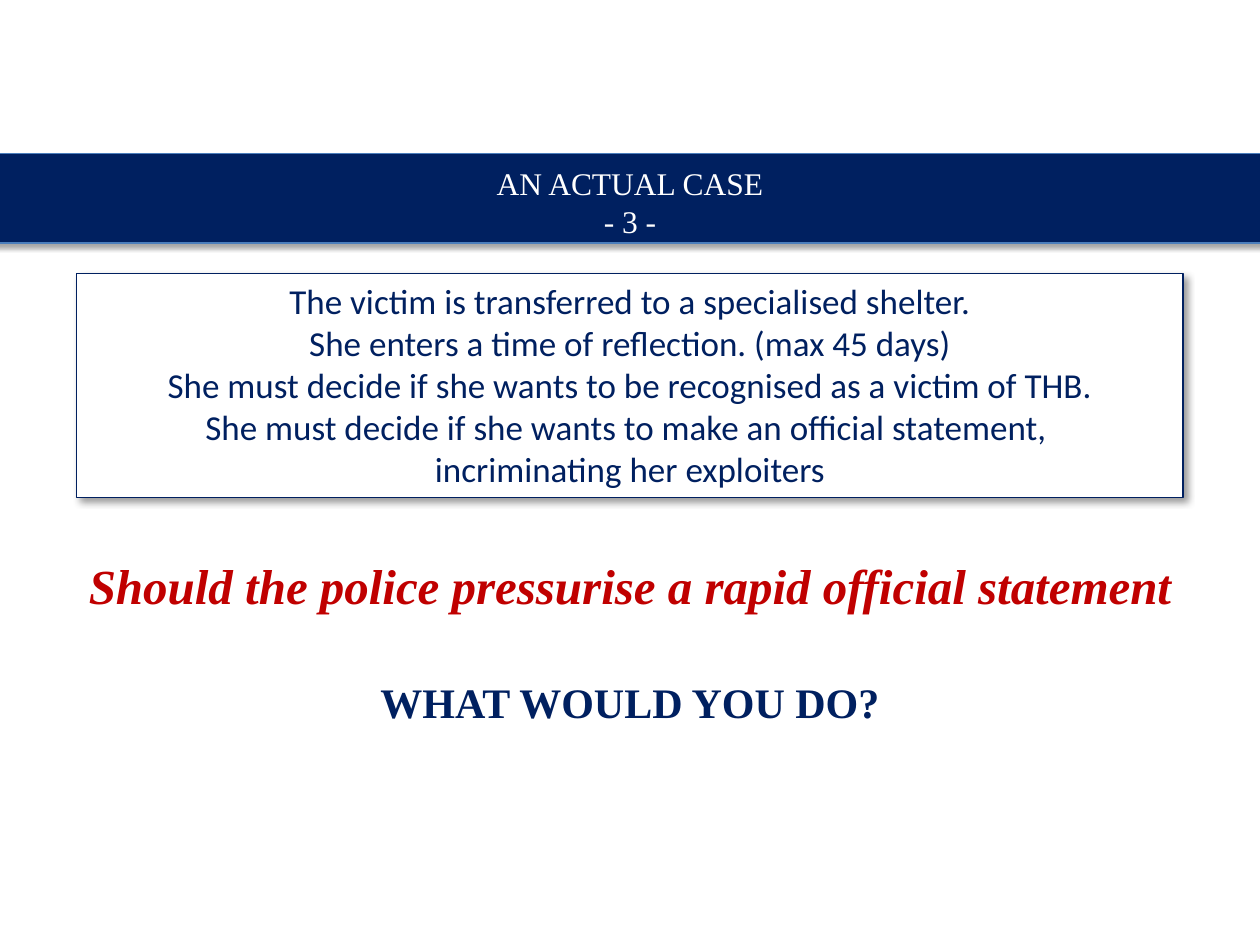
from lxml import etree
from pptx import Presentation
from pptx.dml.color import RGBColor
from pptx.enum.shapes import MSO_SHAPE
from pptx.enum.text import MSO_ANCHOR, PP_ALIGN
from pptx.oxml.ns import qn
from pptx.util import Inches, Pt

RECTANGLE = MSO_SHAPE.RECTANGLE
TOP = MSO_ANCHOR.TOP
CENTER = PP_ALIGN.CENTER

COLORS = {"navy": "002060", "red": "C00000", "white": "FFFFFF",
          "edge": "4B7EBC", "black": "000000"}
SERIF, SANS = "Times New Roman", "Calibri"
TEXT_LEFT, TEXT_WIDTH = 0.41, 9.18


def rgb(name):
    return RGBColor.from_string(COLORS[name])


class CaseSlide:
    """Holds the current slide and draws its elements in one style."""

    def __init__(self, slide):
        self.slide = slide

    def panel(self, left, top, width, height, fill, line, shadow):
        panel = self.slide.shapes.add_shape(
            RECTANGLE, Inches(left), Inches(top), Inches(width), Inches(height))
        panel.fill.solid()
        panel.fill.fore_color.rgb = rgb(fill)
        panel.line.color.rgb = rgb(line)
        panel.line.width = Pt(0.75)
        self.cast_shadow(panel, *shadow)
        return panel

    def cast_shadow(self, shape, opacity, blur, distance, angle):
        shape.shadow.inherit = False
        effects = shape._element.spPr.find(qn("a:effectLst"))
        outer = etree.SubElement(
            effects, qn("a:outerShdw"), blurRad=str(Pt(blur)),
            dist=str(Pt(distance)), dir=str(angle * 60000),
            algn="tl", rotWithShape="0")
        color = etree.SubElement(outer, qn("a:srgbClr"), val=COLORS["black"])
        etree.SubElement(color, qn("a:alpha"), val=str(opacity * 1000))

    def text(self, top, height, lines, **style):
        box = self.slide.shapes.add_textbox(
            Inches(TEXT_LEFT), Inches(top), Inches(TEXT_WIDTH), Inches(height))
        self.set_lines(box, lines, **style)

    def set_lines(self, shape, lines, font, size, color, bold=False, italic=False):
        frame = shape.text_frame
        frame.word_wrap = True
        frame.vertical_anchor = TOP
        frame.text = "\n".join(lines)
        for paragraph in frame.paragraphs:
            paragraph.alignment = CENTER
            for run in paragraph.runs:
                run.font.name = font
                run.font.size = Pt(size)
                run.font.color.rgb = rgb(color)
                run.font.bold = bold
                run.font.italic = italic


def main():
    deck = Presentation()
    deck.slide_width, deck.slide_height = Inches(10), Inches(7.5)
    case = CaseSlide(deck.slides.add_slide(deck.slide_layouts[6]))

    # Facts of the case
    facts = case.panel(0.61, 2.17, 8.78, 1.78, "white", "navy", (40, 4, 3, 45))
    case.set_lines(facts, [
        "The victim is transferred to a specialised shelter.",
        "She enters a time of reflection. (max 45 days)",
        "She must decide if she wants to be recognised as a victim of THB.",
        "She must decide if she wants to make an official statement, ",
        "incriminating her exploiters",
    ], font=SANS, size=20, color="navy")

    # Questions to the audience
    case.text(4.36, 0.57,
              ["Should the police pressurise a rapid official statement"],
              font=SERIF, size=28, color="red", bold=True, italic=True)
    case.text(5.32, 0.5, ["WHAT WOULD YOU DO?"],
              font=SERIF, size=24, color="navy", bold=True)

    # Title band
    case.panel(-0.1, 1.22, 10.17, 0.71, "navy", "edge", (35, 3.1, 1.8, 90))
    case.text(1.25, 0.71, ["AN ACTUAL CASE", "- 3 -"],
              font=SERIF, size=18, color="white")

    deck.save("out.pptx")


if __name__ == "__main__":
    main()
